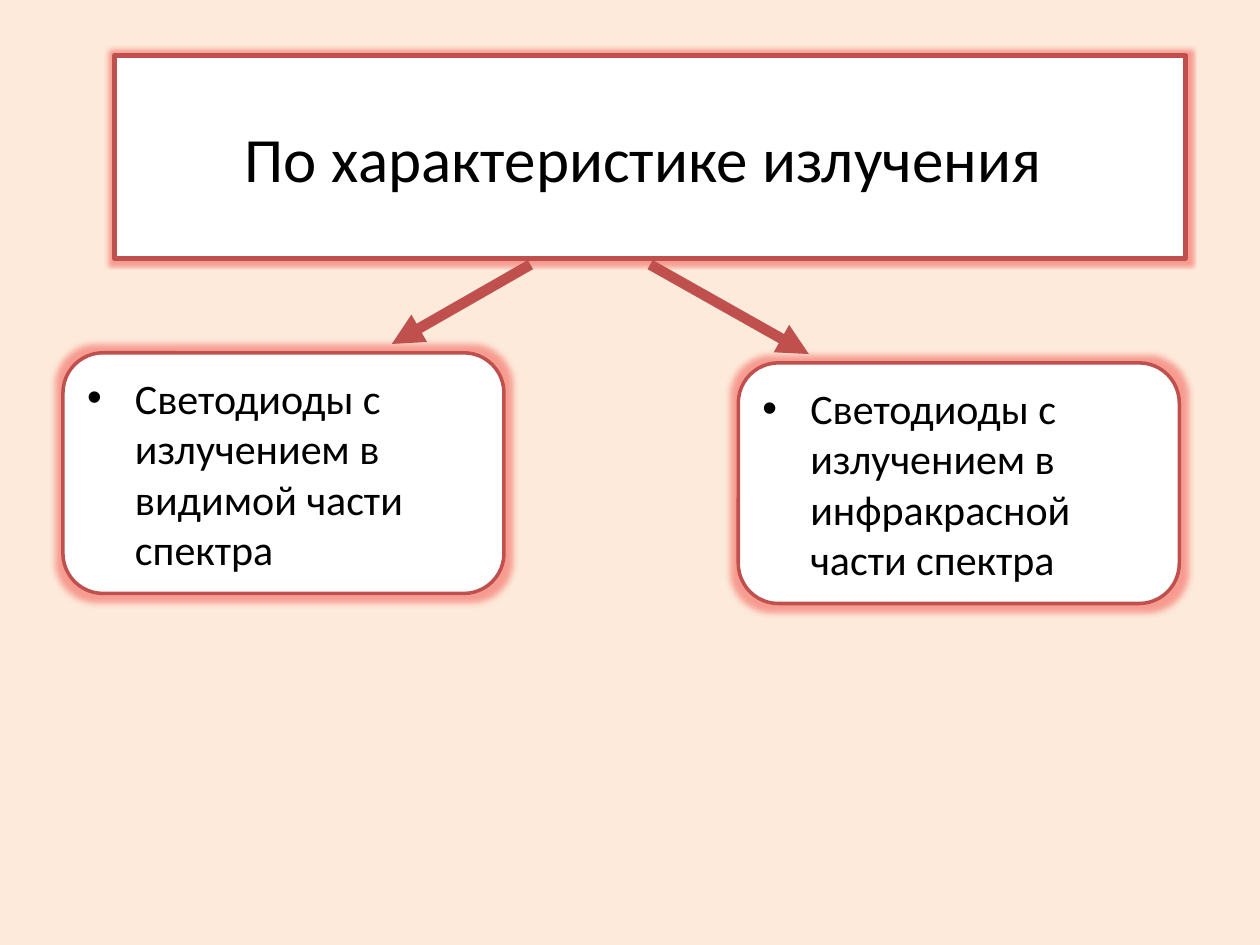
"""Build a slide that divides light-emitting diodes by the kind of their emission."""
import pptx
import pptx.util
import pptx.dml.color
import pptx.enum.shapes
import pptx.enum.text
import pptx.oxml
import pptx.oxml.ns
import lxml.etree

COLORS = {"background": "FDEADA", "box": "FFFFFF", "accent": "C0504D",
          "text": "000000", "glow": "EE2521"}
RGB = {name: pptx.dml.color.RGBColor.from_string(value) for name, value in COLORS.items()}
Inches, Pt = pptx.util.Inches, pptx.util.Pt


def add_child(parent, tag, **attributes):
    child = lxml.etree.SubElement(parent, pptx.oxml.ns.qn(tag))
    for name, value in attributes.items():
        child.set(name, str(value))
    return child


def format_box(shape, text, line_width, glow_radius, font_size):
    shape.fill.solid()
    shape.fill.fore_color.rgb = RGB["box"]
    shape.line.color.rgb = RGB["accent"]
    shape.line.width = Pt(line_width)
    shape.shadow.inherit = False
    effects = shape._element.spPr.find(pptx.oxml.ns.qn("a:effectLst"))
    glow = add_child(effects, "a:glow", rad=Pt(glow_radius))
    color = add_child(glow, "a:srgbClr", val=COLORS["glow"])
    add_child(color, "a:alpha", val=40000)
    frame = shape.text_frame
    frame.word_wrap = True
    frame.vertical_anchor = pptx.enum.text.MSO_ANCHOR.MIDDLE
    paragraph = frame.paragraphs[0]
    run = paragraph.add_run()
    run.text = text
    for name, value in {"name": "Calibri", "size": Pt(font_size)}.items():
        setattr(run.font, name, value)
    run.font.color.rgb = RGB["text"]
    return paragraph


presentation = pptx.Presentation()
presentation.slide_width, presentation.slide_height = Inches(10), Inches(7.5)
slide = presentation.slides.add_slide(presentation.slide_layouts[5])
slide.background.fill.solid()
slide.background.fill.fore_color.rgb = RGB["background"]

title = slide.shapes.title
title_place = {"left": 0.91, "top": 0.44, "width": 8.5, "height": 1.61}
for name, value in title_place.items():
    setattr(title, name, Inches(value))
heading = format_box(title, "По характеристике излучения ", 3, 5, 36)
heading.alignment = pptx.enum.text.PP_ALIGN.CENTER

box_width, box_height = Inches(3.5), Inches(1.91)
indent = Inches(0.38)
branches = [
    ("Светодиоды с излучением в видимой части спектра", (0.5, 2.8), (4.21, 2.1), (3.11, 2.73)),
    ("Светодиоды с излучением в инфракрасной части спектра", (5.86, 2.88), (5.16, 2.1), (6.42, 2.81)),
]
for text, corner, start, end in branches:
    box = slide.shapes.add_shape(pptx.enum.shapes.MSO_SHAPE.ROUNDED_RECTANGLE,
                                 *map(Inches, corner), box_width, box_height)
    item = format_box(box, text, 2, 8, 24)
    item.alignment = pptx.enum.text.PP_ALIGN.LEFT
    item.space_before = Pt(4.8)
    properties = item._p.get_or_add_pPr()
    for name, value in {"marL": indent, "indent": -indent}.items():
        properties.set(name, str(value))
    add_child(properties, "a:buFont", typeface="Arial")
    add_child(properties, "a:buChar", char="•")

    arrow = slide.shapes.add_connector(pptx.enum.shapes.MSO_CONNECTOR.STRAIGHT,
                                       *map(Inches, start + end))
    arrow.line.color.rgb = RGB["accent"]
    arrow.line.width = Pt(6)
    add_child(arrow.line._get_or_add_ln(), "a:tailEnd", type="triangle")
    add_child(arrow._element.spPr, "a:effectLst")

presentation.save("out.pptx")
